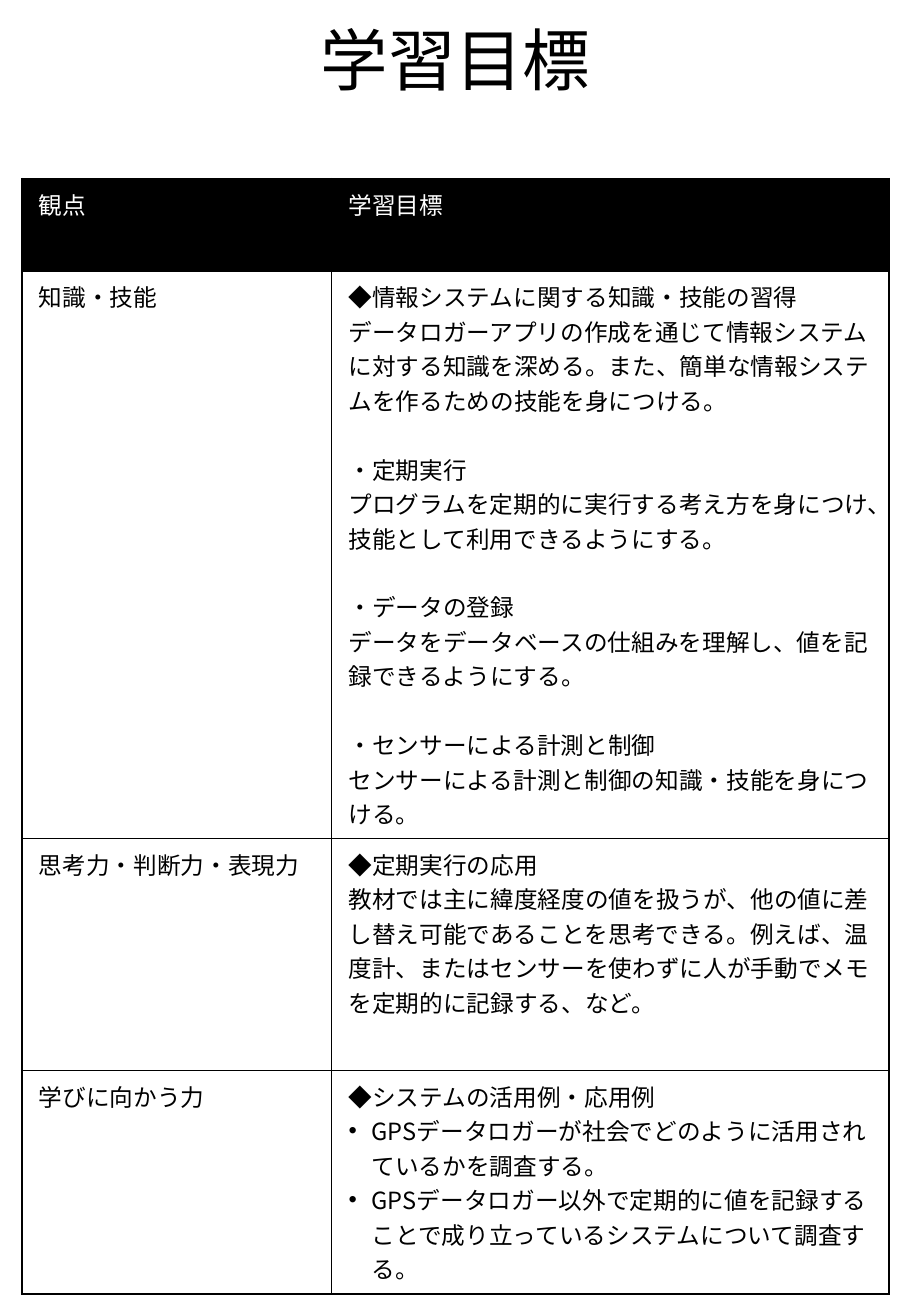
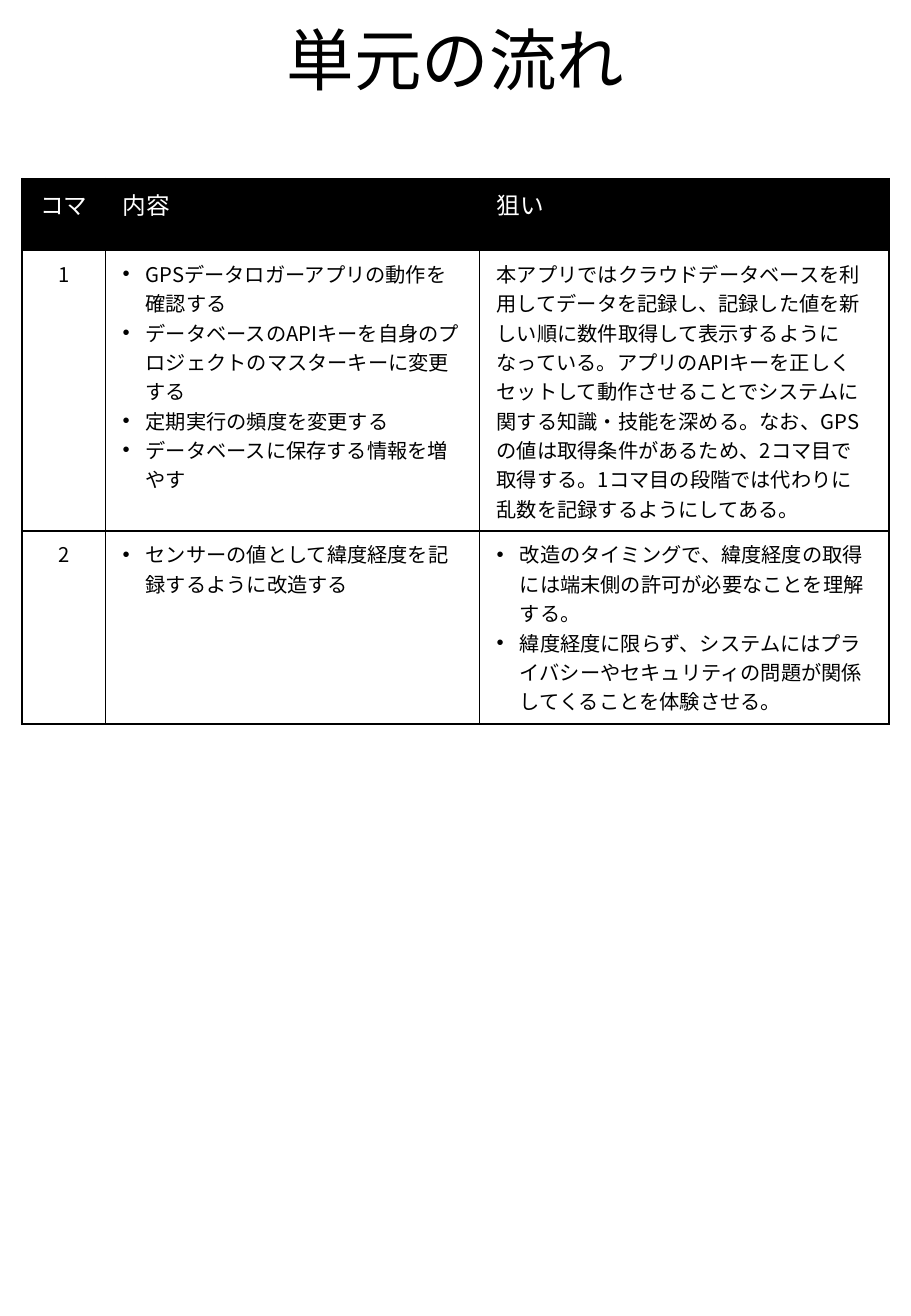
"""Builds the learning goals and lesson flow slides of a data logger unit."""
from dataclasses import dataclass

from lxml.etree import SubElement
from pptx import Presentation
from pptx.dml.color import RGBColor
from pptx.enum.lang import MSO_LANGUAGE_ID
from pptx.enum.text import MSO_ANCHOR, PP_ALIGN
from pptx.oxml import parse_xml
from pptx.oxml.ns import nsdecls, qn
from pptx.util import Pt

PX = 9144
COLORS = {"ink": "000000", "paper": "FFFFFF"}
FONT = "Noto Sans CJK JP"
TITLE_SIZE = 40
HEADER_SIZE = 14
LINE_GAP = 20.4
INDENT = 19
TABLE_LEFT, TABLE_TOP = 18, 147
MARGIN_X, MARGIN_Y = 14, 7


@dataclass
class Line:
    text: str
    bullet: bool = False
    gap: bool = False


def bullets(*texts):
    return [Line(text, bullet=True) for text in texts]


def section(heading, body):
    return [Line(heading, gap=True), Line(body)]


def add_span(para, text, size, color):
    span = para.add_run()
    span.text = text
    font = span.font
    font.name, font.size, font.bold = FONT, Pt(size), False
    font.color.rgb = RGBColor.from_string(COLORS[color])
    font.language_id = MSO_LANGUAGE_ID.JAPANESE
    east_asian = parse_xml(f'<a:ea {nsdecls("a")} typeface="{FONT}"/>')
    span.font._element.find(qn("a:latin")).addnext(east_asian)


def add_bullet(para):
    properties = para._p.get_or_add_pPr()
    properties.set("marL", str(INDENT * PX))
    properties.set("indent", str(-INDENT * PX))
    SubElement(properties, qn("a:buFont"), typeface="Arial")
    SubElement(properties, qn("a:buChar"), char="•")


def fill_cell(cell, lines, size, align, is_header):
    cell.margin_left = cell.margin_right = MARGIN_X * PX
    cell.margin_top = cell.margin_bottom = MARGIN_Y * PX
    cell.fill.solid()
    cell.fill.fore_color.rgb = RGBColor.from_string(COLORS["ink" if is_header else "paper"])
    frame = cell.text_frame
    for index, line in enumerate(lines):
        para = frame.add_paragraph() if index else frame.paragraphs[0]
        para.alignment = align
        if line.gap:
            para.space_before = Pt(LINE_GAP)
        if line.bullet:
            add_bullet(para)
        add_span(para, line.text, size, "paper" if is_header else "ink")
    add_borders(cell)


def add_borders(cell):
    properties = cell._tc.get_or_add_tcPr()
    for index, side in enumerate(("lnL", "lnR", "lnT", "lnB")):
        border = parse_xml(
            f'<a:{side} {nsdecls("a")} w="{Pt(1)}"><a:solidFill>'
            f'<a:srgbClr val="{COLORS["ink"]}"/></a:solidFill></a:{side}>')
        properties.insert(index, border)


def add_title(page, text):
    box = page.shapes.add_textbox(56 * PX, 6 * PX, 638 * PX, 81 * PX)
    frame = box.text_frame
    frame.word_wrap = True
    frame.vertical_anchor = MSO_ANCHOR.BOTTOM
    para = frame.paragraphs[0]
    para.alignment = PP_ALIGN.CENTER
    para.line_spacing = 0.9
    add_span(para, text, TITLE_SIZE, "ink")


def add_grid(page, widths, heights, rows, body_size, first_align):
    table = page.shapes.add_table(
        len(heights), len(widths), TABLE_LEFT * PX, TABLE_TOP * PX,
        sum(widths) * PX, sum(heights) * PX).table
    table.first_row = table.horz_banding = False
    for column, width in zip(table.columns, widths):
        column.width = width * PX
    for row_index, (row, height) in enumerate(zip(rows, heights)):
        table.rows[row_index].height = height * PX
        is_header = row_index == 0
        for column_index, content in enumerate(row):
            lines = [Line(content)] if isinstance(content, str) else content
            align = PP_ALIGN.LEFT if column_index else first_align
            size = HEADER_SIZE if is_header else body_size
            fill_cell(table.cell(row_index, column_index), lines, size, align, is_header)


def add_page(deck, title, **grid):
    page = deck.slides.add_slide(deck.slide_layouts[6])
    add_title(page, title)
    add_grid(page, **grid)


GOALS = [
    ["観点", "学習目標"],
    ["知識・技能", [
        Line("◆情報システムに関する知識・技能の習得"),
        Line("データロガーアプリの作成を通じて情報システムに対する知識を深める。"
             "また、簡単な情報システムを作るための技能を身につける。"),
        *section("・定期実行",
                 "プログラムを定期的に実行する考え方を身につけ、技能として利用できるようにする。"),
        *section("・データの登録",
                 "データをデータベースの仕組みを理解し、値を記録できるようにする。"),
        *section("・センサーによる計測と制御",
                 "センサーによる計測と制御の知識・技能を身につける。"),
    ]],
    ["思考力・判断力・表現力", [
        Line("◆定期実行の応用"),
        Line("教材では主に緯度経度の値を扱うが、他の値に差し替え可能であることを思考できる。"
             "例えば、温度計、またはセンサーを使わずに人が手動でメモを定期的に記録する、など。"),
    ]],
    ["学びに向かう力", [
        Line("◆システムの活用例・応用例"),
        *bullets(
            "GPSデータロガーが社会でどのように活用されているかを調査する。",
            "GPSデータロガー以外で定期的に値を記録することで成り立っているシステムについて調査する。"),
    ]],
]

FLOW = [
    ["コマ", "内容", "狙い"],
    ["1",
     bullets(
         "GPSデータロガーアプリの動作を確認する",
         "データベースのAPIキーを自身のプロジェクトのマスターキーに変更する",
         "定期実行の頻度を変更する",
         "データベースに保存する情報を増やす"),
     "本アプリではクラウドデータベースを利用してデータを記録し、"
     "記録した値を新しい順に数件取得して表示するようになっている。"
     "アプリのAPIキーを正しくセットして動作させることでシステムに関する知識・技能を深める。"
     "なお、GPSの値は取得条件があるため、2コマ目で取得する。"
     "1コマ目の段階では代わりに乱数を記録するようにしてある。"],
    ["2",
     bullets("センサーの値として緯度経度を記録するように改造する"),
     bullets(
         "改造のタイミングで、緯度経度の取得には端末側の許可が必要なことを理解する。",
         "緯度経度に限らず、システムにはプライバシーやセキュリティの問題が"
         "関係してくることを体験させる。")],
]


def main():
    deck = Presentation()
    deck.slide_width, deck.slide_height = 750 * PX, 1083 * PX
    add_page(deck, "学習目標", widths=[255, 459], heights=[76, 467, 191, 184],
             rows=GOALS, body_size=14, first_align=PP_ALIGN.LEFT)
    add_page(deck, "単元の流れ", widths=[69, 308, 337], heights=[59, 231, 159],
             rows=FLOW, body_size=12, first_align=PP_ALIGN.CENTER)
    deck.save("out.pptx")


if __name__ == "__main__":
    main()
